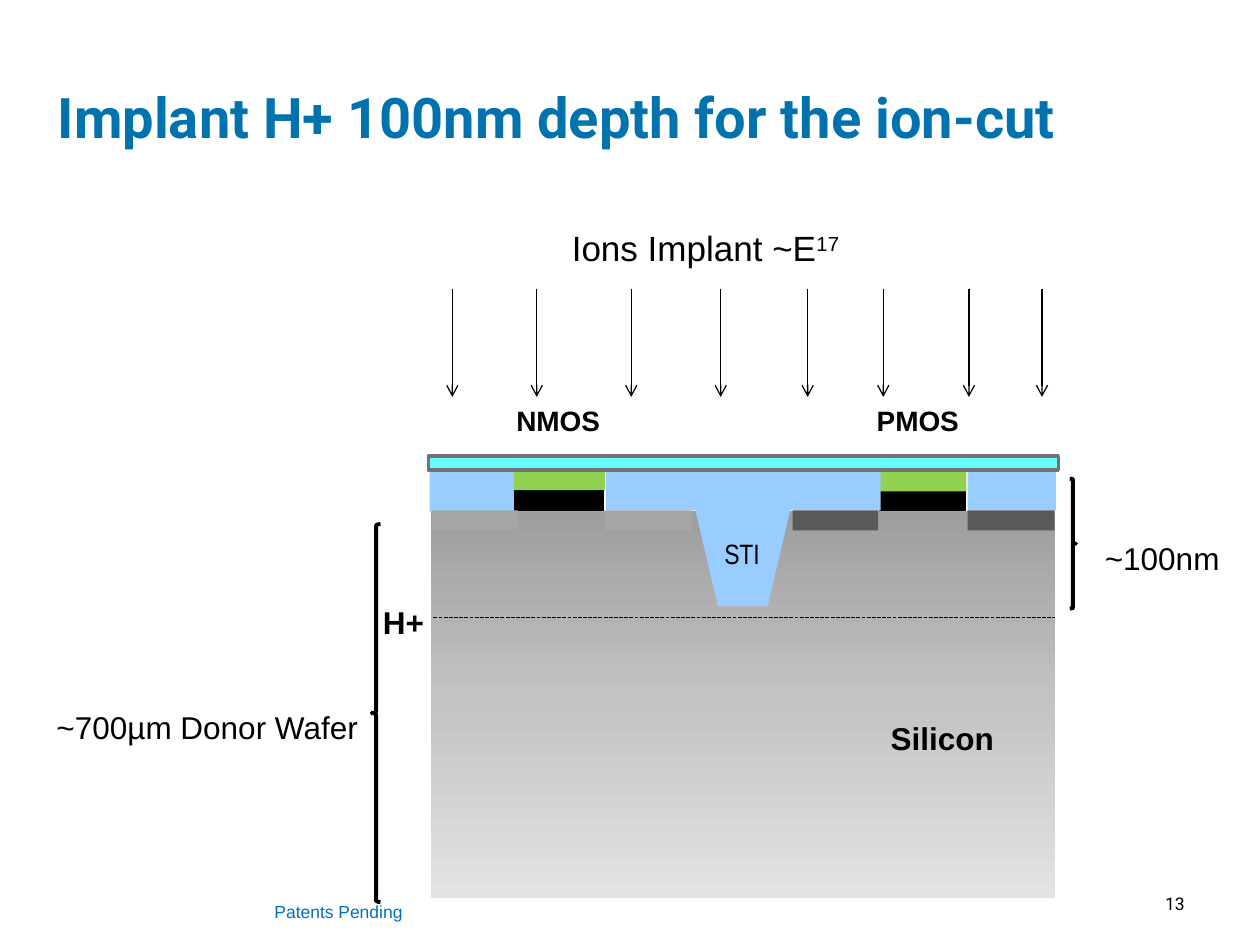
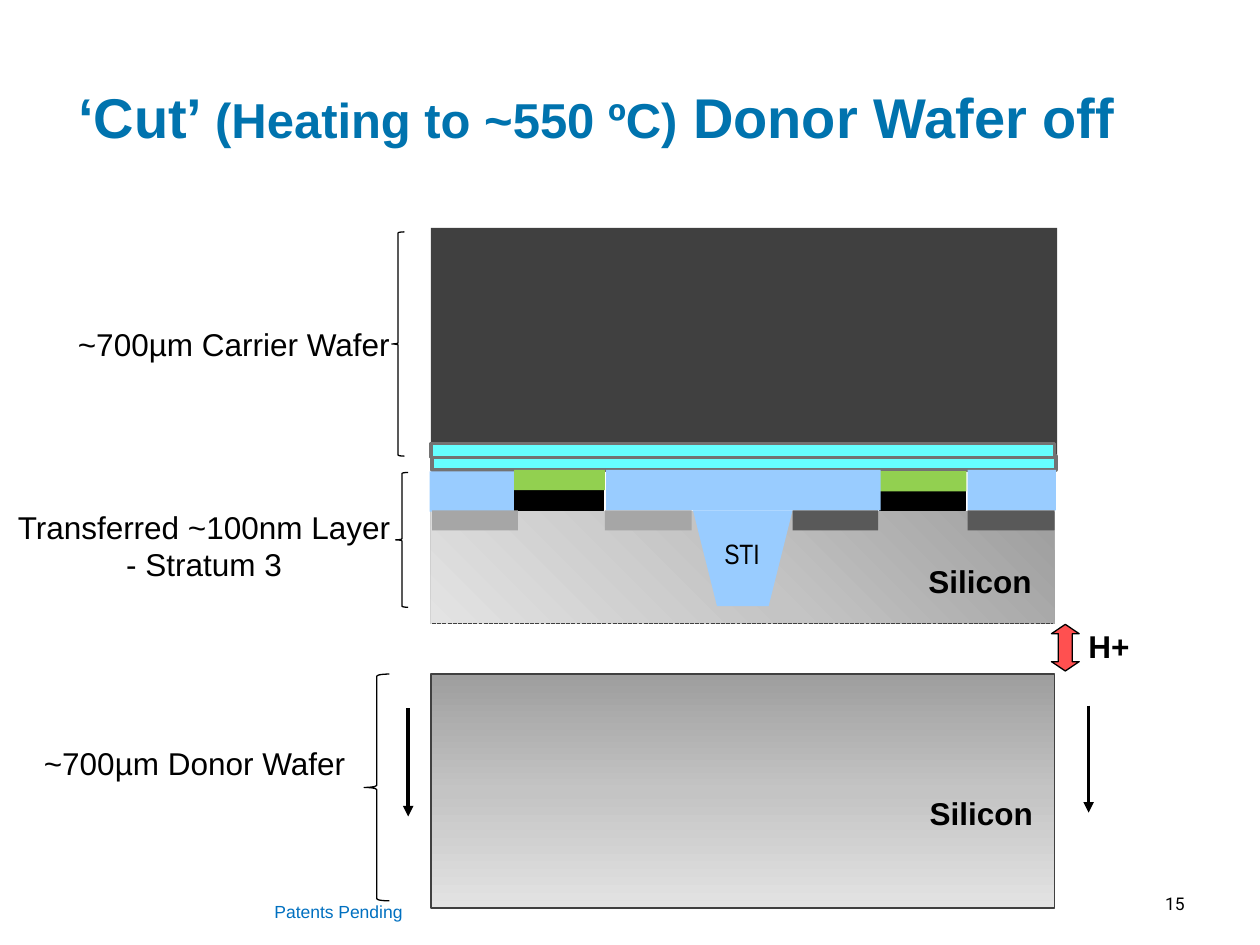
from copy import deepcopy
from dataclasses import dataclass
from typing import NamedTuple, Optional

from lxml.etree import SubElement
from pptx import Presentation
from pptx.dml.color import RGBColor
from pptx.enum.dml import MSO_LINE
from pptx.enum.shapes import MSO_CONNECTOR, MSO_SHAPE as Preset
from pptx.enum.text import MSO_ANCHOR, MSO_AUTO_SIZE as AutoSize, PP_ALIGN as Align
from pptx.oxml.ns import qn
from pptx.util import Inches, Pt


@dataclass(frozen=True)
class Theme:
    title: str = "0073AE"
    notice: str = "0070C0"
    ink: str = "000000"
    carrier: str = "404040"
    oxide: str = "66FFFF"
    oxide_edge: str = "737373"
    insulator: str = "99CCFF"
    gate: str = "000000"
    gate_cap: str = "92D050"
    nmos_well: str = "A6A6A6"
    pmos_well: str = "595959"
    cleave: str = "FF5050"
    silicon: tuple = ("9E9E9E", "C4C4C4", "E3E3E3")
    font: str = "Arial"
    narrow_font: str = "Arial Narrow"
    heading_font: str = "Roboto"
    title_size: int = 32
    title_aside_size: int = 28
    ion_size: int = 20
    label_size: int = 18
    device_size: int = 16
    footer_size: int = 10


THEME = Theme()


class Box(NamedTuple):
    left: float
    top: float
    width: float
    height: float

    def inches(self):
        return [Inches(length) for length in self]


class Layer(NamedTuple):
    box: Box
    fill: str
    edge: Optional[str] = None
    edge_width: float = 0.75


class Label(NamedTuple):
    box: Box
    text: str
    bold: bool = False


class Brace(NamedTuple):
    box: Box
    width: float = 0.75
    curve: float = 0.083
    preset: Preset = Preset.LEFT_BRACE


class Arrow(NamedTuple):
    x: float
    top: float
    bottom: float
    width: float
    head: str


DEVICE_LAYERS = (
    Layer(Box(4.08, 3.89, 0.71, 0.16), THEME.gate, THEME.gate),
    Layer(Box(6.98, 3.89, 0.68, 0.16), THEME.gate, THEME.gate),
    Layer(Box(4.08, 3.73, 0.72, 0.16), THEME.gate_cap),
    Layer(Box(6.97, 3.74, 0.7, 0.16), THEME.gate_cap),
    Layer(Box(3.41, 3.74, 0.67, 0.32), THEME.insulator),
    Layer(Box(4.81, 3.73, 2.18, 0.32), THEME.insulator),
    Layer(Box(7.68, 3.73, 0.7, 0.32), THEME.insulator),
    Layer(Box(3.43, 4.05, 0.68, 0.16), THEME.nmos_well),
    Layer(Box(4.8, 4.05, 0.69, 0.16), THEME.nmos_well),
    Layer(Box(6.29, 4.05, 0.68, 0.16), THEME.pmos_well),
    Layer(Box(7.68, 4.05, 0.69, 0.16), THEME.pmos_well),
)
ION_POSITIONS = (3.59, 4.26, 5.01, 5.72, 6.41, 7.01, 7.69, 8.27)


def rgb(color: str) -> RGBColor:
    return RGBColor.from_string(color)


def write(paragraph, text: str, *, size: float = THEME.label_size, color: str = THEME.ink,
          font: str = THEME.font, bold: bool = False, align=Align.LEFT, baseline: int = 0):
    paragraph.alignment = align
    run = paragraph.add_run()
    run.text = text
    run.font.size = Pt(size)
    run.font.name = font
    run.font.bold = bold
    run.font.color.rgb = rgb(color)
    if baseline:
        run.font._element.set("baseline", str(baseline * 1000))


def add_label(slide, box: Box, text: str, *, wrap: bool = False, **text_format):
    frame = slide.shapes.add_textbox(*box.inches()).text_frame
    frame.word_wrap = wrap
    frame.auto_size = AutoSize.SHAPE_TO_FIT_TEXT
    for index, line in enumerate(text.split("\n")):
        paragraph = frame.add_paragraph() if index else frame.paragraphs[0]
        write(paragraph, line, **text_format)
    return frame.paragraphs[0]


def add_shape(slide, preset: Preset, box: Box, *, fill: Optional[str] = None,
              edge: Optional[str] = None, edge_width: float = 0.75, rotation: float = 0,
              adjustments: tuple = ()):
    shape = slide.shapes.add_shape(preset, *box.inches())
    shape.shadow.inherit = False
    shape.rotation = rotation
    for index, value in enumerate(adjustments):
        shape.adjustments[index] = value
    if fill:
        shape.fill.solid()
        shape.fill.fore_color.rgb = rgb(fill)
    else:
        shape.fill.background()
    if edge:
        shape.line.color.rgb = rgb(edge)
        shape.line.width = Pt(edge_width)
    else:
        shape.line.fill.background()
    return shape


def add_layer(slide, layer: Layer):
    add_shape(slide, Preset.RECTANGLE, layer.box, fill=layer.fill,
              edge=layer.edge, edge_width=layer.edge_width)


def add_silicon(slide, box: Box, angle: float = 270, edge: Optional[str] = None):
    block = add_shape(slide, Preset.RECTANGLE, box, edge=edge, edge_width=1)
    block.fill.gradient()
    block.fill.gradient_angle = angle
    first_stop = block._element.spPr.find(".//" + qn("a:gs"))
    first_stop.addnext(deepcopy(first_stop))
    for index, (stop, color) in enumerate(zip(block.fill.gradient_stops, THEME.silicon)):
        stop.position = index / 2
        stop.color.rgb = rgb(color)


def add_brace(slide, brace: Brace):
    add_shape(slide, brace.preset, brace.box, edge=THEME.ink, edge_width=brace.width,
              adjustments=(brace.curve, 0.5))


def add_line(slide, start: tuple, end: tuple, *, color: str = THEME.ink, width: float = 0.75,
             dashed: bool = False, head: Optional[str] = None):
    connector = slide.shapes.add_connector(
        MSO_CONNECTOR.STRAIGHT, *(Inches(value) for value in (*start, *end)))
    connector.line.color.rgb = rgb(color)
    connector.line.width = Pt(width)
    if dashed:
        connector.line.dash_style = MSO_LINE.SQUARE_DOT
    properties = connector._element.spPr
    if head:
        SubElement(properties.find(qn("a:ln")), qn("a:tailEnd"), type=head)
    SubElement(properties, qn("a:effectLst"))


def add_arrow(slide, arrow: Arrow):
    add_line(slide, (arrow.x, arrow.top), (arrow.x, arrow.bottom),
             width=arrow.width, head=arrow.head)


def add_device(slide, trench: Box):
    add_shape(slide, Preset.TRAPEZOID, trench, fill=THEME.insulator, rotation=180)
    for layer in DEVICE_LAYERS:
        add_layer(slide, layer)
    add_label(slide, Box(5.65, 4.21, 0.63, 0.37), "STI", wrap=True,
              size=THEME.device_size, font=THEME.narrow_font)


def add_annotations(slide, labels: tuple, braces: tuple, arrows: tuple):
    for label in labels:
        add_label(slide, label.box, label.text, bold=label.bold)
    for brace in braces:
        add_brace(slide, brace)
    for arrow in arrows:
        add_arrow(slide, arrow)


def start_slide(deck, number: int, title_left: float, title_runs: tuple, title_font: str):
    slide = deck.slides.add_slide(deck.slide_layouts[5])
    title = slide.shapes.title
    title.left, title.top, title.width, title.height = Box(
        title_left, 0.3, 10 - title_left, 1.25).inches()
    frame = title.text_frame
    frame.auto_size = AutoSize.NONE
    frame.vertical_anchor = MSO_ANCHOR.MIDDLE
    for text, size in title_runs:
        write(frame.paragraphs[0], text, size=size, color=THEME.title,
              font=title_font, bold=True)
    add_label(slide, Box(8.39, 7.04, 1.11, 0.33), str(number), wrap=True,
              size=THEME.footer_size, font=THEME.heading_font, align=Align.RIGHT)
    add_label(slide, Box(2.08, 7.1, 1.22, 0.27), "Patents Pending",
              size=THEME.footer_size, color=THEME.notice)
    return slide


def build_implant(deck):
    slide = start_slide(
        deck, 13, 0.36, (("Implant H+ 100nm depth for the ion-cut", THEME.title_size),),
        THEME.heading_font)
    add_silicon(slide, Box(3.42, 4.06, 4.95, 3.07))
    add_device(slide, Box(5.5, 3.97, 0.79, 0.84))
    add_layer(slide, Layer(Box(3.4, 3.62, 5, 0.11), THEME.oxide, THEME.oxide_edge, 2))
    add_line(slide, (3.44, 4.9), (8.37, 4.9), dashed=True)
    for left, polarity in ((4, "NMOS"), (6.86, "PMOS")):
        add_label(slide, Box(left, 3.15, 0.87, 0.37), polarity,
                  size=THEME.device_size, bold=True)
    dose = add_label(slide, Box(4.44, 1.75, 2.87, 0.43), "Ions Implant ~E", wrap=True,
                     size=THEME.ion_size)
    write(dose, "17", size=THEME.ion_size, baseline=30)
    add_annotations(
        slide,
        labels=(
            Label(Box(0.35, 5.57, 2.6, 0.4), "~700µm Donor Wafer"),
            Label(Box(8.67, 4.23, 1.11, 0.4), "~100nm"),
            Label(Box(2.94, 4.74, 0.53, 0.4), "H+", True),
            Label(Box(6.97, 5.66, 1.11, 0.4), "Silicon", True),
        ),
        braces=(
            Brace(Box(2.95, 4.16, 0.07, 3), 2.25, 0.187),
            Brace(Box(8.49, 3.8, 0.05, 1.03), 2.25, 0.093, Preset.RIGHT_BRACE),
        ),
        arrows=tuple(Arrow(x, 2.29, 3.15, 0.75, "arrow") for x in ION_POSITIONS),
    )


def build_cut(deck):
    title_runs = (("‘Cut’ ", THEME.title_size),
                  ("(Heating to ~550 ºC)", THEME.title_aside_size),
                  (" Donor Wafer off", THEME.title_size))
    slide = start_slide(deck, 15, 0.52, title_runs, THEME.font)
    add_silicon(slide, Box(3.42, 4.06, 4.95, 0.89), angle=225)
    add_silicon(slide, Box(3.42, 5.35, 4.95, 1.86), edge=THEME.carrier)
    add_layer(slide, Layer(Box(3.42, 1.81, 4.97, 1.8), THEME.carrier))
    for left, top in ((3.43, 3.62), (3.42, 3.52)):
        add_layer(slide, Layer(Box(left, top, 4.95, 0.11), THEME.oxide, THEME.oxide_edge, 2))
    add_device(slide, Box(5.5, 4.05, 0.79, 0.76))
    add_line(slide, (3.43, 4.95), (8.36, 4.95), color=THEME.carrier, dashed=True)
    add_shape(slide, Preset.LEFT_RIGHT_ARROW, Box(8.27, 5.03, 0.37, 0.22), fill=THEME.cleave,
              edge=THEME.ink, rotation=270, adjustments=(0.5, 0.338))
    add_label(slide, Box(0, 3.98, 3.24, 0.7), "Transferred ~100nm Layer\n- Stratum 3",
              wrap=True, align=Align.CENTER)
    add_annotations(
        slide,
        labels=(
            Label(Box(0.52, 2.53, 2.7, 0.4), "~700µm Carrier Wafer"),
            Label(Box(0.25, 5.86, 2.6, 0.4), "~700µm Donor Wafer"),
            Label(Box(8.54, 4.93, 0.53, 0.4), "H+", True),
            Label(Box(7.27, 4.41, 1.11, 0.4), "Silicon", True),
            Label(Box(7.28, 6.25, 1.11, 0.4), "Silicon", True),
        ),
        braces=(
            Brace(Box(3.11, 1.84, 0.1, 1.78)),
            Brace(Box(3.14, 3.75, 0.1, 1.07)),
            Brace(Box(2.89, 5.35, 0.2, 1.8)),
        ),
        arrows=(
            Arrow(3.24, 5.62, 6.48, 2, "triangle"),
            Arrow(8.64, 5.6, 6.45, 2, "triangle"),
        ),
    )


def main():
    deck = Presentation()
    deck.slide_width, deck.slide_height = Inches(10), Inches(7.5)
    build_implant(deck)
    build_cut(deck)
    deck.save("out.pptx")


if __name__ == "__main__":
    main()
